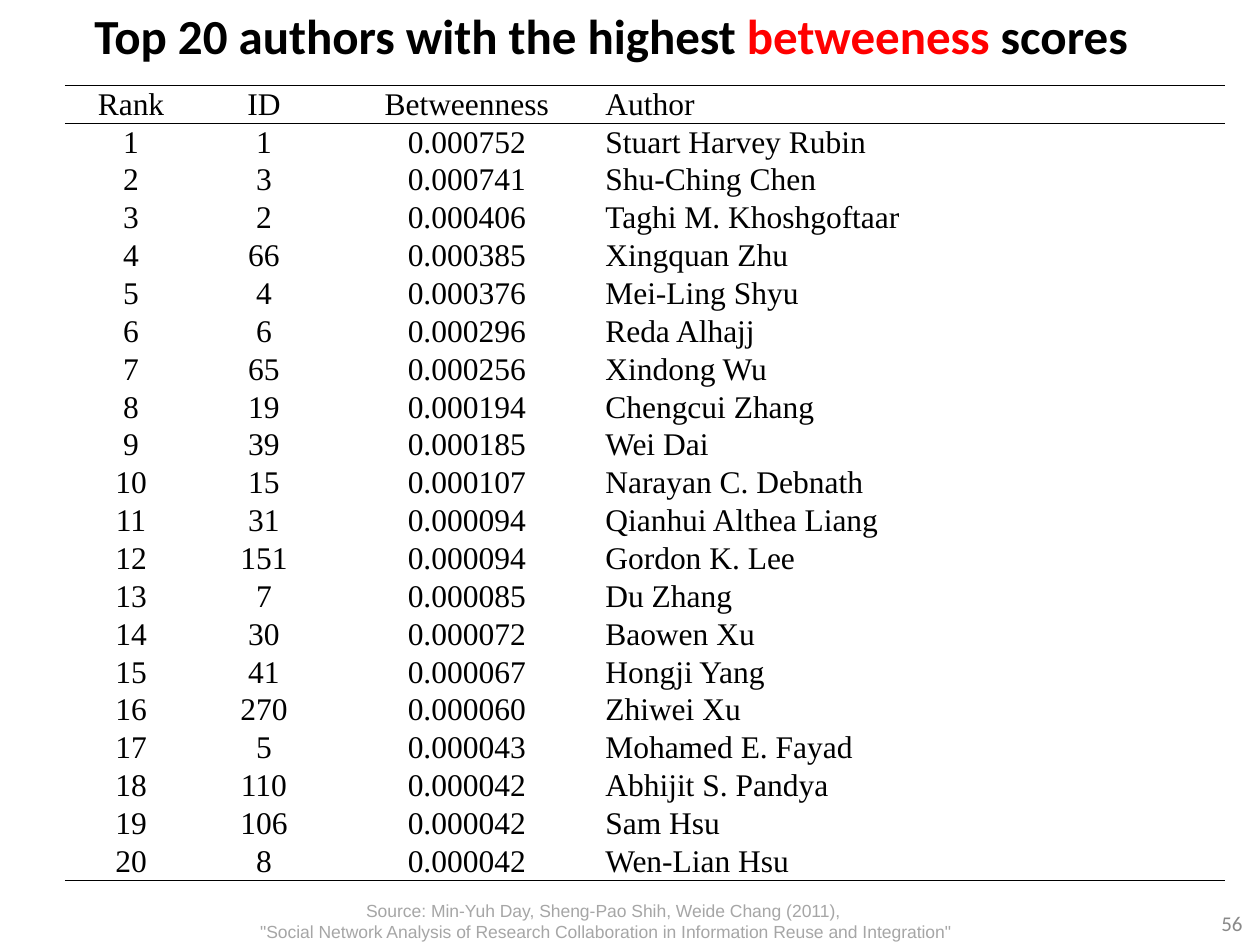
"""Build a slide that ranks twenty authors by betweenness."""
from dataclasses import dataclass
from typing import NamedTuple

from lxml.etree import SubElement
from pptx import Presentation
from pptx.dml.color import RGBColor
from pptx.enum.text import MSO_ANCHOR, PP_ALIGN
from pptx.oxml.ns import qn
from pptx.util import Inches, Pt


@dataclass(frozen=True)
class Theme:
    """Colours, fonts, type sizes and the grid unit in inches."""
    ink: str = "000000"
    hot: str = "FF0000"
    page: str = "898989"
    note: str = "A6A6A6"
    head: str = "Calibri"
    body: str = "Times New Roman"
    sans: str = "Arial"
    title: int = 28
    cell: int = 18
    small: int = 12
    tiny: int = 10
    rule: int = 1
    unit: float = 0.1


class Box(NamedTuple):
    """A frame in grid columns and rows."""
    col: float
    row: float
    wide: float
    high: float


class Span(NamedTuple):
    """A run of text with its look."""
    text: str
    size: int
    font: str
    color: str
    bold: bool = False


class Label(NamedTuple):
    """A text box of one paragraph made of lines of spans."""
    box: Box
    lines: list[list[Span]]
    align: PP_ALIGN
    anchor: MSO_ANCHOR


class Author(NamedTuple):
    """A ranked author."""
    ident: int
    score: str
    name: str


THEME = Theme()
WIDE, HIGH = 100, 75
GRID = Box(5.15, 6.8, 92.1, 63)
COLS = (10.5, 10.6, 21.6, 49.4)
HEADS = ("Rank", "ID", "Betweenness", "Author")
AUTHORS = (
    Author(1, "0.000752", "Stuart Harvey Rubin"),
    Author(3, "0.000741", "Shu-Ching Chen"),
    Author(2, "0.000406", "Taghi M. Khoshgoftaar"),
    Author(66, "0.000385", "Xingquan Zhu"),
    Author(4, "0.000376", "Mei-Ling Shyu"),
    Author(6, "0.000296", "Reda Alhajj"),
    Author(65, "0.000256", "Xindong Wu"),
    Author(19, "0.000194", "Chengcui Zhang"),
    Author(39, "0.000185", "Wei Dai"),
    Author(15, "0.000107", "Narayan C. Debnath"),
    Author(31, "0.000094", "Qianhui Althea Liang"),
    Author(151, "0.000094", "Gordon K. Lee"),
    Author(7, "0.000085", "Du Zhang"),
    Author(30, "0.000072", "Baowen Xu"),
    Author(41, "0.000067", "Hongji Yang"),
    Author(270, "0.000060", "Zhiwei Xu"),
    Author(5, "0.000043", "Mohamed E. Fayad"),
    Author(110, "0.000042", "Abhijit S. Pandya"),
    Author(106, "0.000042", "Sam Hsu"),
    Author(8, "0.000042", "Wen-Lian Hsu"),
)


def size(units: float) -> int:
    """Turn grid units into a length."""
    return Inches(units * THEME.unit)


def write(para, span: Span) -> None:
    """Add one run to a paragraph."""
    run = para.add_run()
    run.text = span.text
    font = run.font
    font.size, font.name, font.bold = Pt(span.size), span.font, span.bold
    font.color.rgb = RGBColor.from_string(span.color)


def draw_label(slide, label: Label) -> None:
    """Draw a text box."""
    frame = slide.shapes.add_textbox(*map(size, label.box)).text_frame
    frame.word_wrap = True
    frame.vertical_anchor = label.anchor
    para = frame.paragraphs[0]
    para.alignment = label.align
    for i, line in enumerate(label.lines):
        if i:
            para.add_line_break()
        for span in line:
            write(para, span)


def edge(cell, tag: str, shown: bool) -> None:
    """Set one cell border, ruled or empty."""
    line = SubElement(cell._tc.get_or_add_tcPr(), qn(f"a:{tag}"),
                      w=str(Pt(THEME.rule)))
    if shown:
        fill = SubElement(line, qn("a:solidFill"))
        SubElement(fill, qn("a:srgbClr"), val=THEME.ink)
    else:
        SubElement(line, qn("a:noFill"))


def draw_cell(cell, text: str, align: PP_ALIGN, top: bool, base: bool) -> None:
    """Fill one table cell."""
    cell.margin_left = cell.margin_right = Inches(0.02)
    cell.margin_top = cell.margin_bottom = 0
    cell.vertical_anchor = MSO_ANCHOR.MIDDLE
    for tag, shown in (("lnL", False), ("lnR", False), ("lnT", top), ("lnB", base)):
        edge(cell, tag, shown)
    cell.fill.background()
    para = cell.text_frame.paragraphs[0]
    para.alignment = align
    write(para, Span(text, THEME.cell, THEME.body, THEME.ink))


def draw_table(slide) -> None:
    """Draw the ranking with rules around its head and at its foot."""
    rows = [HEADS] + [(str(rank), str(a.ident), a.score, a.name)
                      for rank, a in enumerate(AUTHORS, 1)]
    last = len(rows) - 1
    table = slide.shapes.add_table(len(rows), len(COLS), *map(size, GRID)).table
    table.first_row = table.horz_banding = False
    for col, wide in zip(table.columns, COLS):
        col.width = size(wide)
    for r, row in enumerate(rows):
        table.rows[r].height = size(GRID.high / len(rows))
        for c, text in enumerate(row):
            align = PP_ALIGN.LEFT if c == len(COLS) - 1 else PP_ALIGN.CENTER
            draw_cell(table.cell(r, c), text, align, r < 2, r in (0, last))


def main() -> None:
    """Build and save the slide."""
    deck = Presentation()
    deck.slide_width, deck.slide_height = size(WIDE), size(HIGH)
    slide = deck.slides.add_slide(deck.slide_layouts[6])
    title = [Span(text, THEME.title, THEME.head, color, True) for text, color in (
        ("Top 20 authors with the highest ", THEME.ink),
        ("betweeness", THEME.hot),
        (" scores", THEME.ink))]
    source = [[Span(text, THEME.tiny, THEME.sans, THEME.note)] for text in (
        "Source: Min-Yuh Day, Sheng-Pao Shih, Weide Chang (2011), ",
        '"Social Network Analysis of Research Collaboration in '
        'Information Reuse and Integration"')]
    number = [Span("56", THEME.small, THEME.head, THEME.page)]
    draw_label(slide, Label(Box(2, 0.5, 93, 4.6), [title],
                            PP_ALIGN.CENTER, MSO_ANCHOR.MIDDLE))
    draw_table(slide)
    draw_label(slide, Label(Box(76.3, 71.3, 23.3, 4), [number],
                            PP_ALIGN.RIGHT, MSO_ANCHOR.MIDDLE))
    draw_label(slide, Label(Box(7.5, 70.9, 81.1, 4.4), source,
                            PP_ALIGN.CENTER, MSO_ANCHOR.TOP))
    deck.save("out.pptx")


if __name__ == "__main__":
    main()
